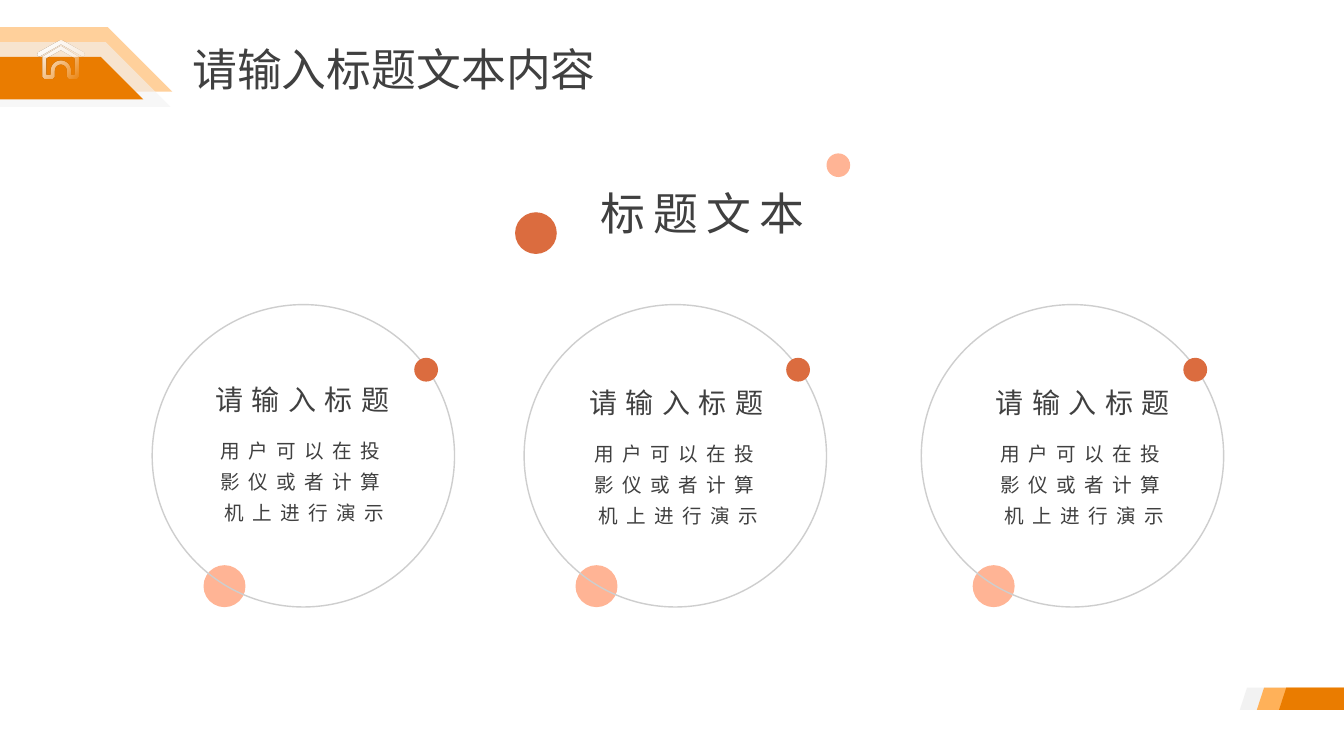
from math import cos, pi, sin

from lxml.etree import SubElement
from pptx import Presentation
from pptx.dml.color import RGBColor
from pptx.enum.shapes import MSO_SHAPE
from pptx.enum.text import MSO_AUTO_SIZE, PP_ALIGN
from pptx.oxml.ns import qn
from pptx.util import Pt

TITLE = "请输入标题文本内容"
TOPIC = " 标题文本"
# heading, body, left of ring, left and top of body text
RINGS = [
    ("请输入标题", "用户可以在投影仪或者计算机上进行演示", 108.7, 140.4, 305.3),
    ("请输入标题", "用户可以在投影仪或者计算机上进行演示", 374.4, 407.5, 307.4),
    ("请输入标题", "用户可以在投影仪或者计算机上进行演示", 658.1, 697.7, 307.4),
]
INK, RUST, PEACH, GREY = "404040", "DB6C3F", "FFB495", "CECECE"
ORANGE, AMBER, PALE, WHITE = "EA7C00", "FFB159", "F2F2F2", "FFFFFF"
# top, height, top right, bottom right, colour, opacity in percent
BANNER = [
    (19.4, 46.1, 77, 123.1, AMBER, 60),
    (30.2, 46.1, 75.6, 121.7, PALE, 60),
    (40.6, 30.5, 72, 102.4, ORANGE, 100),
]
# bottom left, colour
FOOTER = [(885.6, PALE), (897.8, AMBER), (913.6, ORANGE)]
FOOT_TOP, FOOT_LOW, SLANT, EDGE = 491.1, 507, 5.2, 960


def arch(radius, start, end, steps=16):
    """Points along the doorway arc of the house, angles in radians."""
    return [(43.4 + radius * cos(a), 50.4 - radius * sin(a))
            for a in (start + (end - start) * i / steps
                      for i in range(steps + 1))]


HOUSE = [
    [(60.5, 39.6), (59, 40.5), (58.3, 40.3), (43.5, 32), (28.8, 40.3),
     (28, 40.5), (26.6, 39.6), (27.3, 37.6), (42.8, 29), (44.3, 29),
     (59.8, 37.6)],
    [(56.2, 41), (56.2, 54.7), (55, 56.2), (49, 56.2), (47.7, 54.7),
     *arch(4.3, 0, pi), (39.1, 54.7), (37.7, 56.2), (31.7, 56.2),
     (30.2, 54.7), (30.2, 41), (31, 40.3), (42.8, 33.3), (44, 33.3),
     (55.4, 40.3)],
    [(53.3, 41.8), (43.4, 36), (33.1, 41.8), (33.1, 53.3), (36.2, 53.3),
     *arch(7.2, pi, 0), (50.6, 53.3), (53.3, 53.3)],
]

deck = Presentation()
deck.slide_width, deck.slide_height = Pt(960), Pt(540)
slide = deck.slides.add_slide(deck.slide_layouts[6])
shapes = slide.shapes


def tint(part, code):
    """Give a fill or line fill one solid colour."""
    part.solid()
    part.fore_color.rgb = RGBColor.from_string(code)


def fade(color, percent):
    """Set the opacity of a colour element."""
    SubElement(color, qn("a:alpha")).set("val", str(percent * 1000))


def outline(*loops):
    """Draw closed loops of points as one shape without a line."""
    loops = [[(Pt(x), Pt(y)) for x, y in loop] for loop in loops]
    pen = shapes.build_freeform(*loops[0][0])
    for i, loop in enumerate(loops):
        if i:
            pen.move_to(*loop[0])
        pen.add_line_segments(loop[1:], close=True)
    shape = pen.convert_to_shape()
    shape.shadow.inherit = False
    shape.line.fill.background()
    return shape


def disc(x, y, size, fill=None, line=None):
    shape = shapes.add_shape(MSO_SHAPE.OVAL, Pt(x), Pt(y), Pt(size), Pt(size))
    shape.shadow.inherit = False
    if fill:
        tint(shape.fill, fill)
    else:
        shape.fill.background()
    if line:
        tint(shape.line.fill, line)
        shape.line.width = Pt(1)
    else:
        shape.line.fill.background()


def write(text, x, y, w, h, size, font="Cabin", align=PP_ALIGN.LEFT,
          space=6, lead=None):
    frame = shapes.add_textbox(Pt(x), Pt(y), Pt(w), Pt(h)).text_frame
    frame.word_wrap = True
    frame.auto_size = MSO_AUTO_SIZE.SHAPE_TO_FIT_TEXT
    para = frame.paragraphs[0]
    para.alignment = align
    if lead:
        para.line_spacing = lead
    run = para.add_run()
    run.text = text
    run.font.size, run.font.name = Pt(size), font
    tint(run.font.fill, INK)
    if space:
        run.font._element.set("spc", str(space * 100))


for top, high, near, far, code, percent in BANNER:
    band = outline([(0, top), (near, top), (far, top + high), (0, top + high)])
    tint(band.fill, code)
    if percent < 100:
        fade(band._element.spPr.find(".//" + qn("a:srgbClr")), percent)

write(TITLE, 130.3, 26.6, 324.7, 46.1, 32, font="Roboto",
      align=PP_ALIGN.JUSTIFY, space=0)

house = outline(*HOUSE)
house.fill.gradient()
house.fill.gradient_angle = 315
for stop, place in zip(house.fill.gradient_stops, (0.1, 1)):
    stop.color.rgb = RGBColor.from_string(WHITE)
    stop.position = place
fade(house._element.spPr.findall(".//" + qn("a:srgbClr"))[-1], 0)

for left, code in FOOTER:
    strip = outline([(left, FOOT_LOW), (left + SLANT, FOOT_TOP),
                     (EDGE, FOOT_TOP), (EDGE, FOOT_LOW)])
    tint(strip.fill, code)

write(TOPIC, 383, 128.9, 224.6, 46.1, 32, align=PP_ALIGN.CENTER)
disc(367.9, 151.6, 29.8, fill=RUST)
disc(590.4, 109.6, 16.9, fill=PEACH)

for head, body, ring, left, top in RINGS:
    write(body, left, top, 154.1, 73.4, 14, align=PP_ALIGN.CENTER, lead=1.3)
    write(head, left + 6.5, top - 35.3, 154.1, 31.7, 20)
    disc(ring + 36.7, 403.7, 30, fill=PEACH)
    disc(ring, 217.6, 216, line=GREY)
    disc(ring + 187.2, 255.6, 17, fill=RUST)

deck.save("out.pptx")
